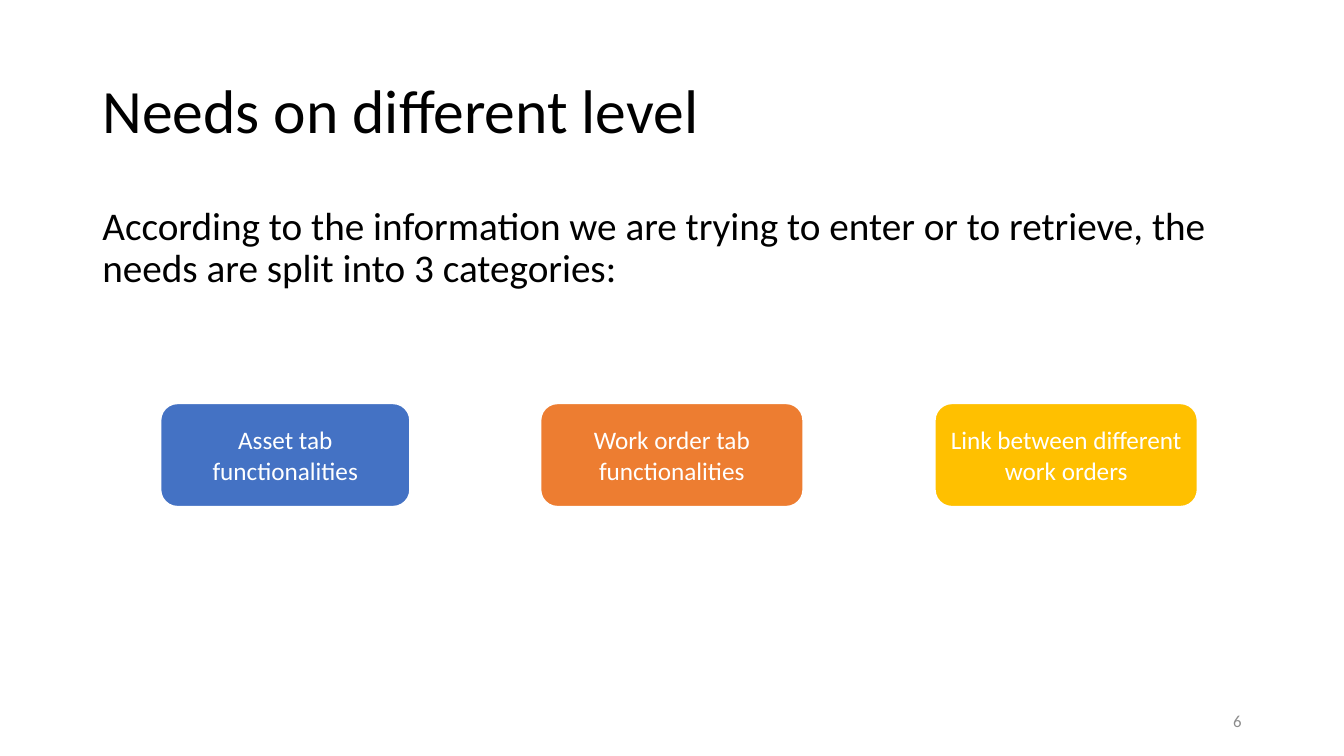
from pptx import Presentation
from pptx.dml.color import RGBColor
from pptx.enum.shapes import MSO_SHAPE as SHAPE
from pptx.enum.text import MSO_ANCHOR as ANCHOR, MSO_AUTO_SIZE as FIT, PP_ALIGN as ALIGN
from pptx.util import Inches, Pt

BLACK = RGBColor(0x00, 0x00, 0x00)
WHITE = RGBColor(0xFF, 0xFF, 0xFF)
GREY = RGBColor(0x8C, 0x8C, 0x8C)
BLUE = RGBColor(0x44, 0x72, 0xC4)
ORANGE = RGBColor(0xED, 0x7D, 0x31)
GOLD = RGBColor(0xFF, 0xC0, 0x00)

TITLE_ONLY = 5
LEFT, WIDTH = 6.88, 86.25
ROW_TOP, ROW_HEIGHT = 53.33, 13.73
CATEGORIES = [
    ("Asset tab functionalities", BLUE, 11.93, 18.6),
    ("Work order tab functionalities", ORANGE, 40.2, 19.58),
    ("Link between different work orders", GOLD, 69.54, 19.58),
]


class SlideBuilder:
    font_name = "Calibri"

    def __init__(self, prs):
        self.prs = prs
        self.s = prs.slides.add_slide(prs.slide_layouts[TITLE_ONLY])

    def area(self, left, top, width, height):
        """Turn percentages of the slide's size into lengths."""
        w, h = self.prs.slide_width, self.prs.slide_height
        return [int(share * full / 100)
                for share, full in zip((left, top, width, height), (w, h, w, h))]

    def set_text(self, sp, text, size, color, align=ALIGN.LEFT,
                 anchor=ANCHOR.MIDDLE, spacing=1.0):
        tf = sp.text_frame
        p = tf.paragraphs[0]
        r = p.add_run()
        r.text = text
        formats = (
            (tf, {"word_wrap": True, "auto_size": FIT.NONE, "vertical_anchor": anchor}),
            (p, {"alignment": align, "line_spacing": spacing}),
            (r.font, {"name": self.font_name, "size": Pt(size)}),
            (r.font.color, {"rgb": color}),
        )
        for target, values in formats:
            for name, value in values.items():
                setattr(target, name, value)

    def title(self, text, *shares):
        sp = self.s.shapes.title
        sp.left, sp.top, sp.width, sp.height = self.area(*shares)
        self.set_text(sp, text, 44, BLACK, spacing=0.9)

    def text(self, text, *shares, **style):
        self.set_text(self.s.shapes.add_textbox(*self.area(*shares)), text, **style)

    def box(self, text, fill, *shares):
        sp = self.s.shapes.add_shape(SHAPE.ROUNDED_RECTANGLE, *self.area(*shares))
        sp.shadow.inherit = False
        sp.fill.solid()
        sp.fill.fore_color.rgb = fill
        sp.line.color.rgb = WHITE
        sp.line.width = Pt(1.5)
        self.set_text(sp, text, 18, WHITE, ALIGN.CENTER)


def main():
    prs = Presentation()
    prs.slide_width, prs.slide_height = Inches(13.33), Inches(7.5)
    slide = SlideBuilder(prs)
    slide.title("Needs on different level", LEFT, 5.33, WIDTH, 19.33)
    slide.text("According to the information we are trying to enter or to retrieve, "
               "the needs are split into 3 categories:",
               LEFT, 26.67, WIDTH, 63.47,
               size=28, color=BLACK, anchor=ANCHOR.TOP, spacing=0.9)
    for label, fill, left, width in CATEGORIES:
        slide.box(label, fill, left, ROW_TOP, width, ROW_HEIGHT)
    slide.text("6", 70.63, 92.67, 22.5, 5.33, size=12, color=GREY, align=ALIGN.RIGHT)
    prs.save("out.pptx")


if __name__ == "__main__":
    main()
